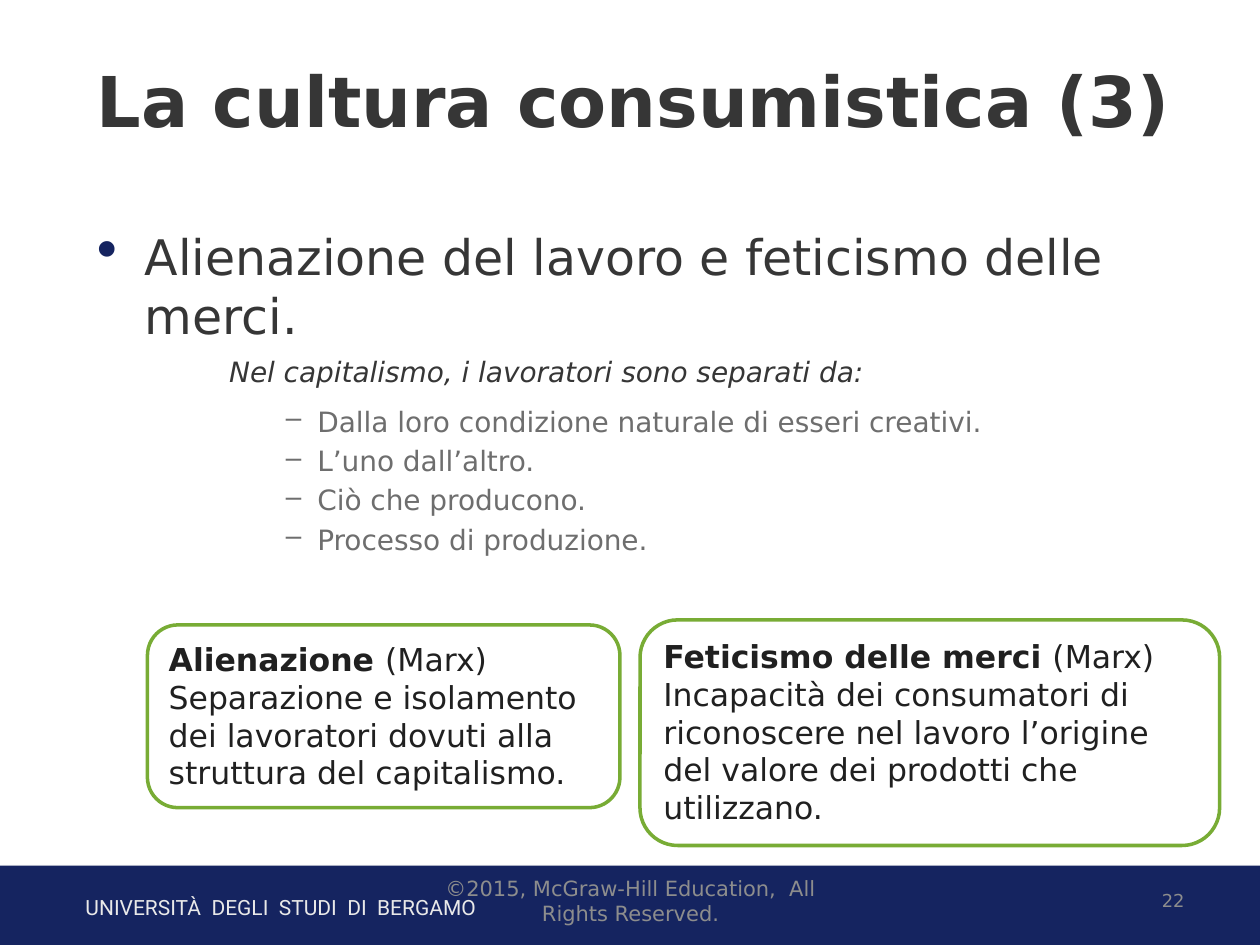
"""Build the slide on consumer culture, alienation and commodity fetishism."""
from lxml import etree
from pptx import Presentation
from pptx.dml.color import RGBColor
from pptx.enum.shapes import MSO_SHAPE
from pptx.enum.text import MSO_ANCHOR, PP_ALIGN
from pptx.oxml import parse_xml
from pptx.oxml.ns import nsdecls, qn
from pptx.util import Inches, Pt

LEFT, CENTER, RIGHT, JUSTIFY = PP_ALIGN.LEFT, PP_ALIGN.CENTER, PP_ALIGN.RIGHT, PP_ALIGN.JUSTIFY
TOP, MIDDLE = MSO_ANCHOR.TOP, MSO_ANCHOR.MIDDLE
RECTANGLE, ROUNDED = MSO_SHAPE.RECTANGLE, MSO_SHAPE.ROUNDED_RECTANGLE
SANS = "DejaVu Sans"
NAVY, GREEN, WHITE = "152460", "78AC35", "FFFFFF"
DARK, BLACK, GREY, PALE = "363636", "202020", "6E6E6E", "8D8D8D"


def color(value):
    return RGBColor.from_string(value)


def add_span(para, text, size, shade, bold=False, italic=False, font=SANS):
    span = para.add_run()
    span.text = text
    span.font.name = font
    span.font.size = Pt(size)
    span.font.bold = bold
    span.font.italic = italic
    span.font.color.rgb = color(shade)


deck = Presentation()
deck.slide_width, deck.slide_height = Inches(10), Inches(7.5)
page = deck.slides.add_slide(deck.slide_layouts[6])

band = page.shapes.add_shape(RECTANGLE, Inches(0), Inches(6.87), Inches(10), Inches(0.68))
band.fill.solid()
band.fill.fore_color.rgb = color(NAVY)
band.line.fill.background()
band.shadow.inherit = False
effects = band._element.spPr.find(qn("a:effectLst"))
effects.append(parse_xml(
    f'<a:outerShdw {nsdecls("a")} blurRad="{Pt(3.1)}" dist="{Pt(1.8)}" dir="5400000" rotWithShape="0">'
    '<a:srgbClr val="000000"><a:alpha val="35000"/></a:srgbClr></a:outerShdw>'))

single_lines = [
    ("UNIVERSITÀ  DEGLI  STUDI  DI  BERGAMO", 0.58, 7.05, 5.82, 0.3, 12, "E9E9E9", LEFT, TOP, False, "Roboto"),
    ("La cultura consumistica (3)", 0.67, 0.25, 8.92, 1.08, 40, DARK, LEFT, MIDDLE, True, SANS),
    ("22", 7.17, 6.95, 2.33, 0.4, 10.2, PALE, RIGHT, MIDDLE, False, SANS),
    ("©2015, McGraw-Hill Education,  All Rights Reserved.", 3.42, 6.95, 3.17, 0.4, 12, PALE, CENTER, MIDDLE,
     False, SANS),
]
for text, left, top, width, height, size, shade, align, anchor, bold, font in single_lines:
    box = page.shapes.add_textbox(Inches(left), Inches(top), Inches(width), Inches(height))
    box.text_frame.word_wrap = True
    box.text_frame.vertical_anchor = anchor
    para = box.text_frame.paragraphs[0]
    para.alignment = align
    add_span(para, text, size, shade, bold, font=font)

body = page.shapes.add_textbox(Inches(0.67), Inches(1.75), Inches(8.92), Inches(4.92)).text_frame
body.word_wrap = True

topic = body.paragraphs[0]
properties = topic._p.get_or_add_pPr()
properties.set("marL", str(Inches(0.38)))
properties.set("indent", str(-Inches(0.38)))
bullet_color = etree.SubElement(properties, qn("a:buClr"))
etree.SubElement(bullet_color, qn("a:srgbClr"), val=NAVY)
etree.SubElement(properties, qn("a:buSzPct"), val="122000")
etree.SubElement(properties, qn("a:buChar"), char="•")
add_span(topic, "Alienazione del lavoro e feticismo delle merci.", 28, DARK)

lead = body.add_paragraph()
lead.level = 2
lead._p.get_or_add_pPr().set("marL", str(Inches(1.05)))
lead._p.pPr.set("indent", "0")
lead.alignment = JUSTIFY
lead.space_before = lead.space_after = Pt(6)
add_span(lead, "Nel capitalismo, i lavoratori sono separati da:", 16, DARK, italic=True)

separations = [
    "Dalla loro condizione naturale di esseri creativi.",
    "L’uno dall’altro.",
    "Ciò che producono.",
    "Processo di produzione.",
]
for text in separations:
    para = body.add_paragraph()
    para.level = 3
    properties = para._p.get_or_add_pPr()
    properties.set("marL", str(Inches(1.75)))
    properties.set("indent", str(-Inches(0.25)))
    etree.SubElement(properties, qn("a:buChar"), char="–")
    para.space_before = Pt(3.2)
    add_span(para, text, 16, GREY)

definitions = [
    ("Alienazione ", "Separazione e isolamento dei lavoratori dovuti alla struttura del capitalismo.",
     1.17, 4.96, 3.75, 1.45),
    ("Feticismo delle merci ",
     "Incapacità dei consumatori di riconoscere nel lavoro l’origine del valore dei prodotti che utilizzano.",
     5.08, 4.92, 4.6, 1.79),
]
for term, meaning, left, top, width, height in definitions:
    card = page.shapes.add_shape(ROUNDED, Inches(left), Inches(top), Inches(width), Inches(height))
    card.shadow.inherit = False
    card.fill.solid()
    card.fill.fore_color.rgb = color(WHITE)
    card.line.color.rgb = color(GREEN)
    card.line.width = Pt(2)
    frame = card.text_frame
    frame.word_wrap = True
    frame.vertical_anchor = TOP
    heading, detail = frame.paragraphs[0], frame.add_paragraph()
    heading.alignment = detail.alignment = LEFT
    add_span(heading, term, 18, BLACK, bold=True)
    add_span(heading, "(Marx)", 18, BLACK)
    add_span(detail, meaning, 18, BLACK)

deck.save("out.pptx")
